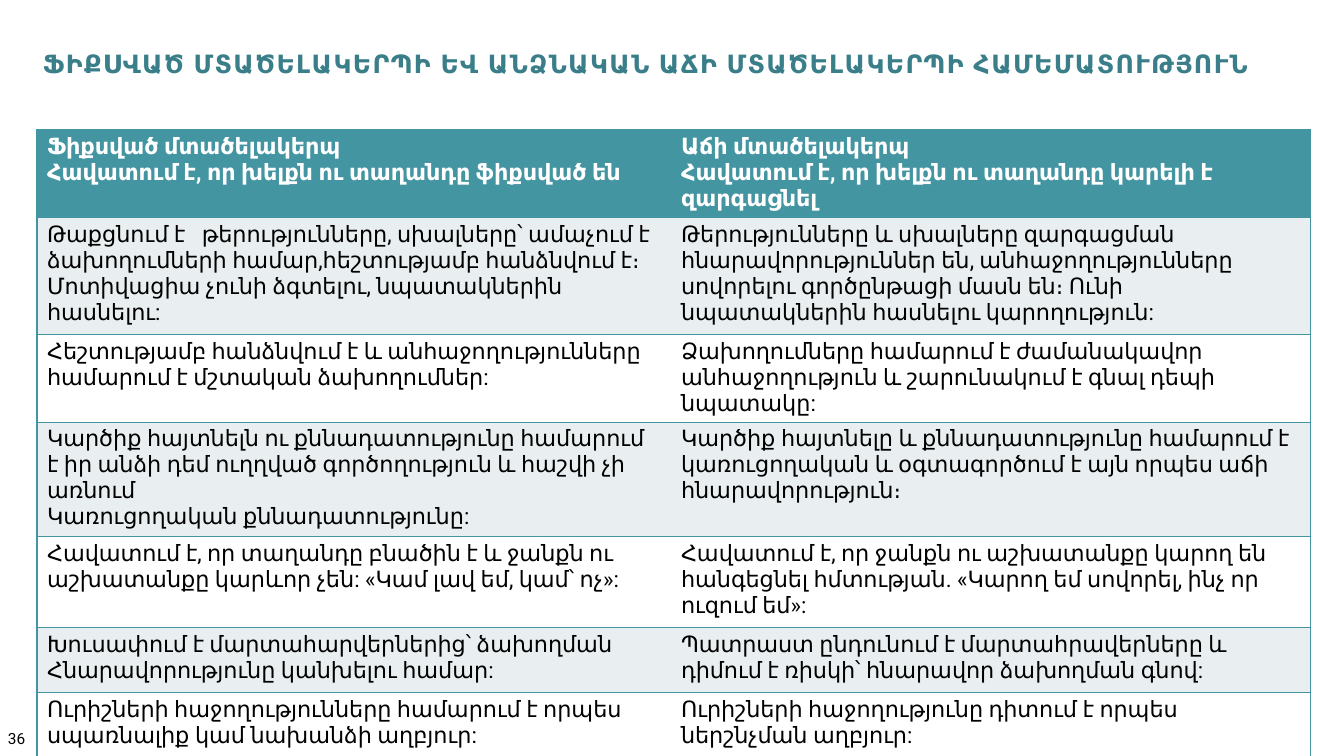
from lxml.etree import SubElement
from pptx import Presentation
from pptx.dml.color import RGBColor as RGB
from pptx.enum.text import MSO_ANCHOR as Anchor
from pptx.oxml.ns import qn
from pptx.util import Pt

PX = 914400 / 100.8
TEAL, DARK, PALE, WHITE, BLACK = "4495A2", "397E89", "E9EFF0", "FFFFFF", "000000"
COLS = [634, 640]
HEIGHTS = [86, 117, 65, 91, 91, 65, 65]
ROWS = [
    ("Ֆիքսված մտածելակերպ\nՀավատում է, որ խելքն ու տաղանդը ֆիքսված են",
     "Աճի մտածելակերպ\nՀավատում է, որ խելքն ու տաղանդը կարելի է զարգացնել"),
    ("Թաքցնում է   թերությունները, սխալները՝ ամաչում է ձախողումների համար,"
     "հեշտությամբ հանձնվում է։ Մոտիվացիա չունի ձգտելու, նպատակներին հասնելու:",
     "Թերությունները և սխալները զարգացման հնարավորություններ են, "
     "անհաջողությունները սովորելու գործընթացի մասն են։ Ունի\n"
     "նպատակներին հասնելու կարողություն:"),
    ("Հեշտությամբ հանձնվում է և անհաջողությունները համարում է մշտական ձախողումներ:",
     "Ձախողումները համարում է ժամանակավոր\n"
     "անհաջողություն և շարունակում է գնալ դեպի նպատակը:"),
    ("Կարծիք հայտնելն ու քննադատությունը համարում է իր անձի դեմ ուղղված "
     "գործողություն և հաշվի չի առնում\nԿառուցողական քննադատությունը:",
     "Կարծիք հայտնելը և քննադատությունը համարում է կառուցողական և "
     "օգտագործում է այն որպես աճի հնարավորություն։"),
    ("Հավատում է, որ տաղանդը բնածին է և ջանքն ու աշխատանքը կարևոր չեն: "
     "«Կամ լավ եմ, կամ՝ ոչ»:",
     "Հավատում է, որ ջանքն ու աշխատանքը կարող են\n"
     "հանգեցնել հմտության. «Կարող եմ սովորել, ինչ որ\nուզում եմ»:"),
    ("Խուսափում է մարտահարվերներից՝ ձախողման\nՀնարավորությունը կանխելու համար:",
     "Պատրաստ ընդունում է մարտահրավերները և դիմում է ռիսկի՝ "
     "հնարավոր ձախողման գնով:"),
    ("Ուրիշների հաջողությունները համարում է որպես\nսպառնալիք կամ նախանձի աղբյուր:",
     "Ուրիշների հաջողությունը դիտում է որպես ներշնչման աղբյուր:"),
]


def px(n):
    return round(n * PX)


def style(frame, size, color, font="Roboto", bold=False):
    for para in frame.paragraphs:
        for run in para.runs:
            run.font.name, run.font.size, run.font.bold = font, Pt(size), bold
            run.font.color.rgb = RGB.from_string(color)


def label(slide, box, text):
    frame = slide.shapes.add_textbox(*map(px, box)).text_frame
    frame.word_wrap = True
    frame.margin_left = frame.margin_right = frame.margin_top = frame.margin_bottom = 0
    frame.text = text
    return frame


def title(slide, box):
    frame = label(slide, box, "ՖԻՔՍՎԱԾ ՄՏԱԾԵԼԱԿԵՐՊԻ ԵՎ ԱՆՁՆԱԿԱՆ ԱՃԻ "
                  "ՄՏԱԾԵԼԱԿԵՐՊԻ ՀԱՄԵՄԱՏՈՒԹՅՈՒՆ")
    frame.vertical_anchor = Anchor.BOTTOM
    para = frame.paragraphs[0]
    para.line_spacing = 1.5
    style(frame, 18, DARK, "Arial", True)
    para.runs[0].font._element.set("spc", "100")


def number(slide, box):
    style(label(slide, box, "36"), 11, BLACK)


def edge(cell, side, color=None):
    """Draw one border of a cell, or clear it when no colour is given."""
    line = SubElement(cell._tc.get_or_add_tcPr(), qn(f"a:ln{side}"), w=str(Pt(1)))
    if color:
        fill = SubElement(line, qn("a:solidFill"))
        SubElement(fill, qn("a:srgbClr"), val=color)
    else:
        SubElement(line, qn("a:noFill"))


def compare(slide, left, top):
    """Table of the fixed mindset against the growth mindset."""
    box = left, top, sum(COLS), sum(HEIGHTS)
    table = slide.shapes.add_table(len(ROWS), len(COLS), *map(px, box)).table
    table.first_row = table.horz_banding = False
    for col, width in zip(table.columns, COLS):
        col.width = px(width)
    for r, texts in enumerate(ROWS):
        table.rows[r].height = px(HEIGHTS[r])
        back = TEAL if r == 0 else PALE if r % 2 else WHITE
        for c, text in enumerate(texts):
            cell = table.cell(r, c)
            cell.margin_top, cell.margin_bottom = px(4), px(3)
            cell.text_frame.text = text
            style(cell.text_frame, 16, BLACK if r else WHITE, bold=r == 0)
            inner = "L" if c else "R"
            for side in "LRTB":
                edge(cell, side, None if side == inner else TEAL)
            cell.fill.solid()
            cell.fill.fore_color.rgb = RGB.from_string(back)


def main():
    deck = Presentation()
    deck.slide_width, deck.slide_height = px(1344), px(756)
    slide = deck.slides.add_slide(deck.slide_layouts[6])
    number(slide, (8, 729, 57, 27))
    title(slide, (43, 31, 1258, 48))
    compare(slide, 37, 130)
    deck.save("out.pptx")


if __name__ == "__main__":
    main()
